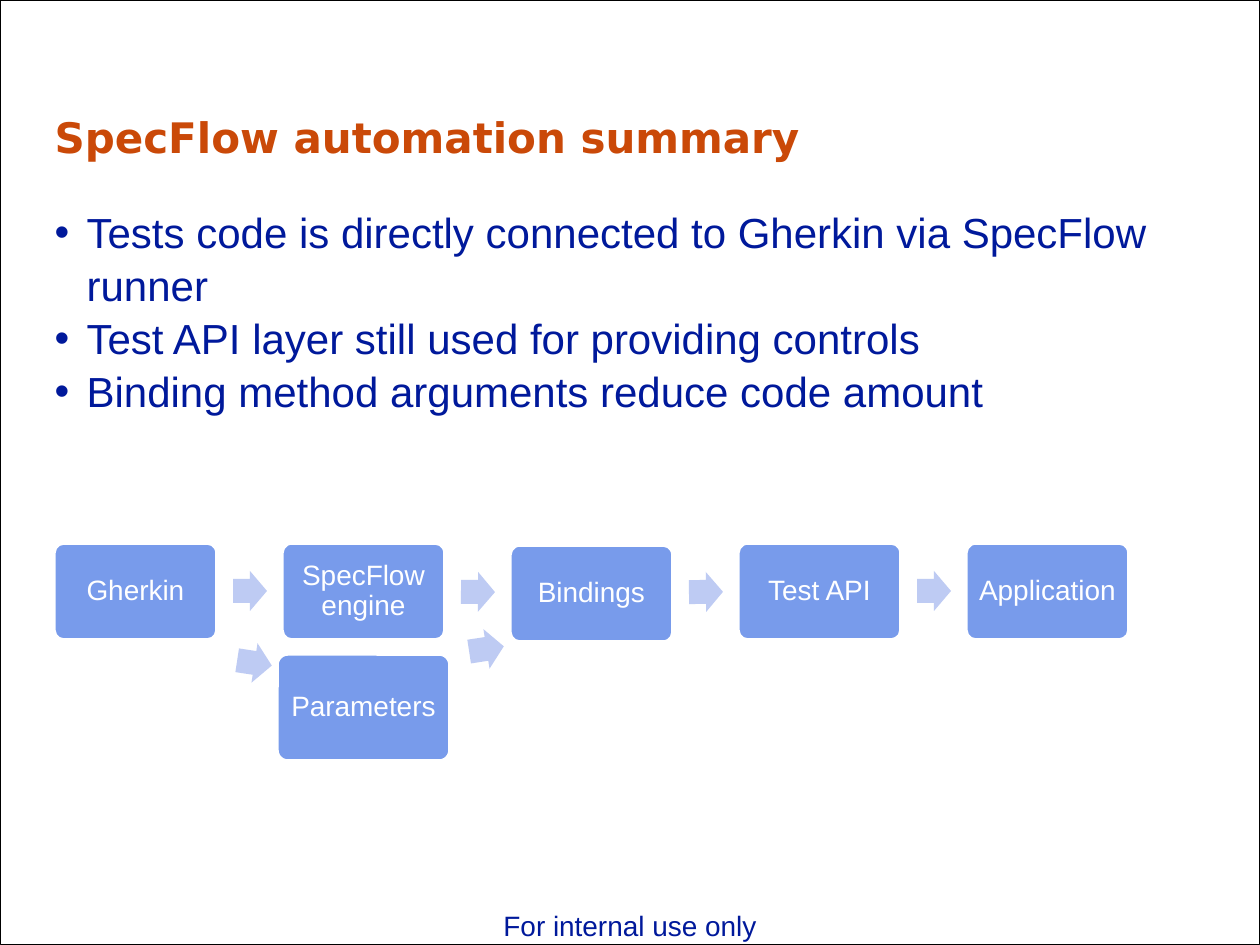
from lxml.etree import SubElement
from pptx import Presentation
from pptx.dml.color import RGBColor
from pptx.enum.shapes import MSO_SHAPE
from pptx.enum.text import MSO_ANCHOR, MSO_AUTO_SIZE, PP_ALIGN
from pptx.oxml.ns import qn
from pptx.util import Emu, Pt

TITLE = "SpecFlow automation summary"
BULLETS = [
    "Tests code is directly connected to Gherkin via SpecFlow runner",
    "Test API layer still used for providing controls",
    "Binding method arguments reduce code amount",
]
FOOTER = "For internal use only"
STEPS = ["Gherkin", "SpecFlow engine", "Bindings", "Test API", "Application"]
STEP_TOPS = [543, 543, 545, 543, 543]
FLOW_ARROWS = [(571, 0), (572, 0.5), (572, -0.5), (571, 0)]
BRANCH = ("Parameters", (277, 654, 173, 107))
BRANCH_ARROWS = [((237, 643, 35, 40), 8.7), ((469, 629, 35, 40), -8.7)]
FIRST_LEFT, PITCH, STEP_WIDTH, STEP_HEIGHT = 54, 228, 163, 97
ARROW_OFFSET, ARROW_WIDTH, ARROW_HEIGHT = 179, 34, 40
NAVY, ORANGE, BLUE, PALE, WHITE = "00199B", "CA4908", "789BEB", "BECBF3", "FFFFFF"


def px(length):
    return Emu(round(length * 914400 / 126))


def color(value):
    return RGBColor.from_string(value)


def place(shape, *box):
    shape.left, shape.top, shape.width, shape.height = map(px, box)


def style(paragraph, size, value, name="Arial", bold=False):
    font = paragraph.font
    font.size, font.name, font.bold = Pt(size), name, bold
    font.color.rgb = color(value)


def add_shape(slide, kind, box, fill=None, line=None, width=2):
    shape = slide.shapes.add_shape(kind, *map(px, box))
    shape.shadow.inherit = False
    for part, value in ((shape.fill, fill), (shape.line.fill, line)):
        if value:
            part.solid()
            part.fore_color.rgb = color(value)
        else:
            part.background()
    if line:
        shape.line.width = Pt(width)
    return shape


def add_step(slide, label, box):
    shape = add_shape(slide, MSO_SHAPE.ROUNDED_RECTANGLE, box, BLUE, WHITE)
    shape.adjustments[0] = 0.1
    frame = shape.text_frame
    frame.word_wrap = True
    frame.vertical_anchor = MSO_ANCHOR.MIDDLE
    frame.margin_left = frame.margin_right = px(9)
    frame.margin_top = frame.margin_bottom = px(9)
    paragraph = frame.paragraphs[0]
    paragraph.text = label
    paragraph.alignment = PP_ALIGN.CENTER
    paragraph.line_spacing = 0.9
    style(paragraph, 16, WHITE)


def add_arrow(slide, box, rotation):
    arrow = add_shape(slide, MSO_SHAPE.RIGHT_ARROW, box, PALE)
    arrow.adjustments[0], arrow.adjustments[1] = 0.6, 0.5
    arrow.rotation = rotation


def add_title(slide):
    title = slide.shapes.title
    place(title, 42, 105, 1087, 63)
    frame = title.text_frame
    frame.text = TITLE
    frame.auto_size = MSO_AUTO_SIZE.NONE
    frame.vertical_anchor = MSO_ANCHOR.TOP
    paragraph = frame.paragraphs[0]
    paragraph.alignment = PP_ALIGN.LEFT
    style(paragraph, 24, ORANGE, "DejaVu Sans", True)


def add_bullets(slide):
    body = slide.placeholders[1]
    place(body, 42, 198, 1160, 217)
    frame = body.text_frame
    frame.text = "\n".join(BULLETS)
    frame.auto_size = MSO_AUTO_SIZE.NONE
    for paragraph in frame.paragraphs:
        properties = paragraph._p.get_or_add_pPr()
        properties.set("marL", str(px(32)))
        properties.set("indent", str(px(-32)))
        SubElement(properties, qn("a:buChar"), char="•")
        paragraph.space_before = Pt(0)
        paragraph.line_spacing = 1.05
        style(paragraph, 24, NAVY)


def add_footer(slide):
    frame = slide.shapes.add_textbox(*map(px, (0, 902, 1260, 47))).text_frame
    frame.word_wrap = True
    paragraph = frame.paragraphs[0]
    paragraph.text = FOOTER
    paragraph.alignment = PP_ALIGN.CENTER
    style(paragraph, 16, NAVY)


def main():
    presentation = Presentation()
    presentation.slide_width, presentation.slide_height = px(1260), px(945)
    slide = presentation.slides.add_slide(presentation.slide_layouts[1])
    add_shape(slide, MSO_SHAPE.RECTANGLE, (0, 0, 1260, 945), line="000000", width=0.5)
    add_footer(slide)
    add_title(slide)
    add_bullets(slide)
    for index, (label, top) in enumerate(zip(STEPS, STEP_TOPS)):
        add_step(slide, label, (FIRST_LEFT + index * PITCH, top, STEP_WIDTH, STEP_HEIGHT))
    for index, (top, rotation) in enumerate(FLOW_ARROWS):
        left = FIRST_LEFT + index * PITCH + ARROW_OFFSET
        add_arrow(slide, (left, top, ARROW_WIDTH, ARROW_HEIGHT), rotation)
    add_step(slide, *BRANCH)
    for box, rotation in BRANCH_ARROWS:
        add_arrow(slide, box, rotation)
    presentation.save("out.pptx")


if __name__ == "__main__":
    main()
